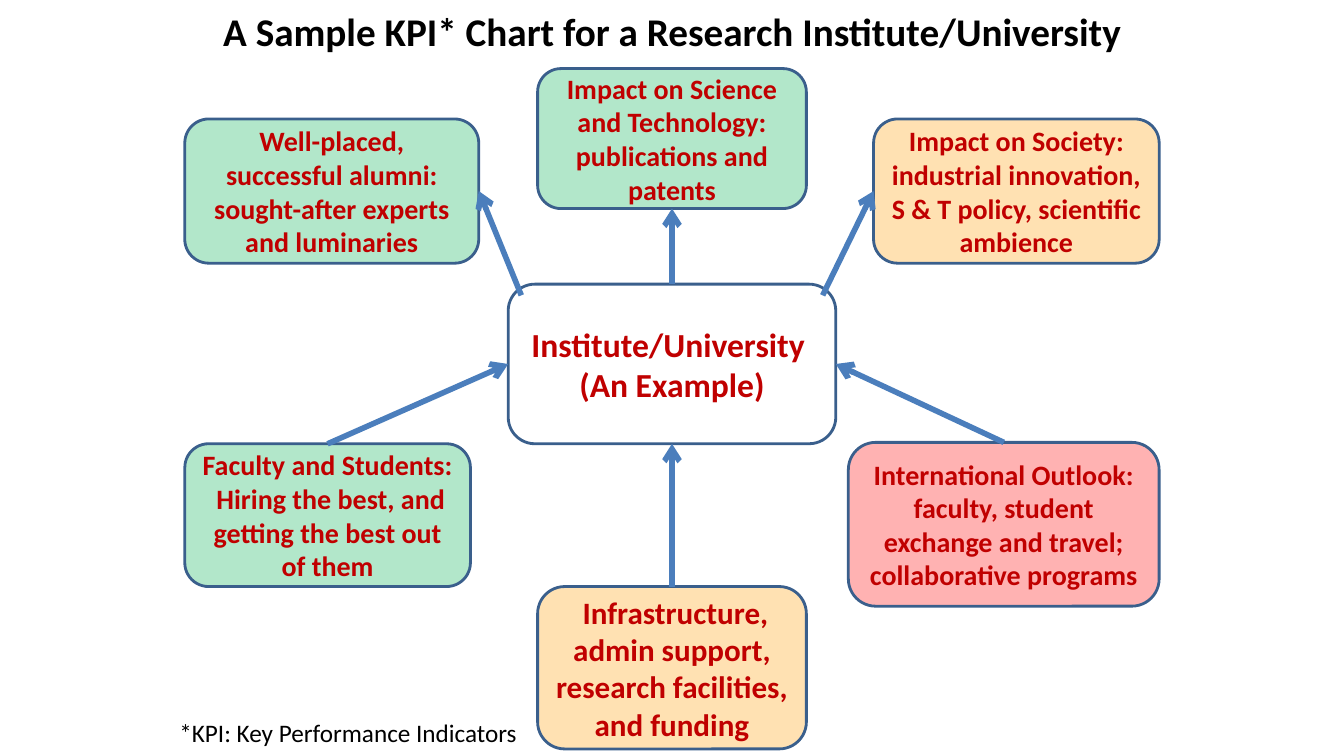
import pptx
import pptx.util
import pptx.dml.color
import pptx.enum.shapes
import pptx.enum.text
import pptx.oxml.ns
import lxml.etree

Pt = pptx.util.Pt
qn = pptx.oxml.ns.qn
ALIGN = pptx.enum.text.PP_ALIGN
ANCHOR = pptx.enum.text.MSO_ANCHOR
FONT = "Calibri"
COLORS = {
    "white": "FFFFFF", "green": "00B050", "orange": "FF9E01", "red": "FF0000",
    "edge": "3A5F8C", "arrow": "4B7EBC", "label": "C00000", "black": "000000",
}
BOXES = {
    "hub": ((363, 203, 234, 114), "white", 24, ["Institute/University ", "(An Example)"]),
    "staff": ((132, 317, 204, 102), "green", 20,
              ["Faculty and Students:  Hiring the best, and getting the best out of them"]),
    "infra": ((384, 419, 192, 116), "orange", 22.2,
              [" Infrastructure, admin support, research facilities, and funding"]),
    "world": ((606, 316, 222, 117), "red", 20,
              ["International Outlook: faculty, student exchange and travel; collaborative programs"]),
    "alumni": ((132, 85, 210, 103), "green", 20,
               ["Well-placed, successful alumni: sought-after experts and luminaries"]),
    "science": ((384, 49, 192, 100), "green", 20,
                ["Impact on Science and Technology: publications and patents"]),
    "social": ((624, 85, 204, 103), "orange", 20,
               ["Impact on Society: industrial innovation, S & T policy, scientific ambience"]),
}
ARROWS = [
    ("hub", (0.5, 0), "science", (0.5, 1)),
    ("infra", (0.5, 0), "hub", (0.5, 1)),
    ("hub", (0.96, 0.07), "social", (0, 0.5)),
    ("hub", (0.04, 0.07), "alumni", (1, 0.5)),
    ("world", (0.5, 0), "hub", (1, 0.5)),
    ("staff", (0.5, 0), "hub", (0, 0.5)),
]
NOTES = [
    ((132, 2, 696, 36), 28, True, ALIGN.CENTER,
     "A Sample KPI* Chart for a Research Institute/University"),
    ((121, 509, 270, 29), 18, False, ALIGN.LEFT, "*KPI: Key Performance Indicators"),
]


def color(name):
    return pptx.dml.color.RGBColor.from_string(COLORS[name])


def write(shape, lines, size, bold, align, ink):
    frame = shape.text_frame
    frame.word_wrap = True
    for i, line in enumerate(lines):
        para = frame.add_paragraph() if i else frame.paragraphs[0]
        para.alignment = align
        run = para.add_run()
        run.text = line
        run.font.name = FONT
        run.font.size = Pt(size)
        run.font.bold = bold
        run.font.color.rgb = color(ink)


def add_box(slide, rect, fill, size, lines):
    box = slide.shapes.add_shape(
        pptx.enum.shapes.MSO_SHAPE.ROUNDED_RECTANGLE, *map(Pt, rect))
    box.shadow.inherit = False
    box.fill.solid()
    box.fill.fore_color.rgb = color(fill)
    tint = box._element.spPr.find(qn("a:solidFill"))[0]
    lxml.etree.SubElement(tint, qn("a:alpha"), val="30000")
    box.line.color.rgb = color("edge")
    box.line.width = Pt(2)
    box.text_frame.vertical_anchor = ANCHOR.MIDDLE
    write(box, lines, size, True, ALIGN.CENTER, "label")


def spot(name, part):
    left, top, width, height = BOXES[name][0]
    return Pt(left + part[0] * width), Pt(top + part[1] * height)


def add_arrow(slide, start, out, end, into):
    link = slide.shapes.add_connector(
        pptx.enum.shapes.MSO_CONNECTOR.STRAIGHT, *spot(start, out), *spot(end, into))
    link.line.color.rgb = color("arrow")
    link.line.width = Pt(4)
    lxml.etree.SubElement(link.line._get_or_add_ln(), qn("a:tailEnd"), type="arrow")
    lxml.etree.SubElement(link._element.spPr, qn("a:effectLst"))


def main():
    deck = pptx.Presentation()
    deck.slide_width, deck.slide_height = Pt(960), Pt(540)
    slide = deck.slides.add_slide(deck.slide_layouts[6])
    for box in BOXES.values():
        add_box(slide, *box)
    for arrow in ARROWS:
        add_arrow(slide, *arrow)
    for rect, size, bold, align, line in NOTES:
        note = slide.shapes.add_textbox(*map(Pt, rect))
        write(note, [line], size, bold, align, "black")
    deck.save("out.pptx")


if __name__ == "__main__":
    main()
